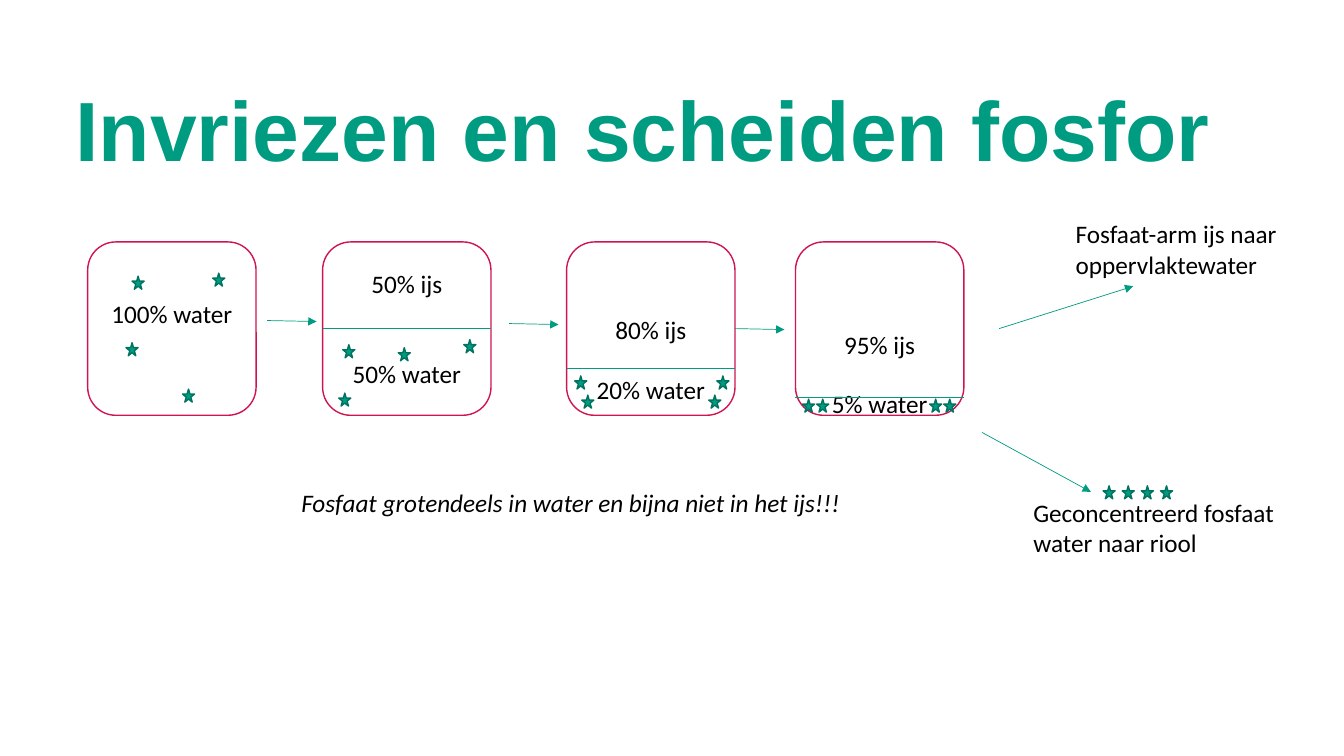
import pptx
import pptx.util
import pptx.dml.color
import pptx.enum.shapes
import pptx.enum.text
import pptx.oxml.ns
import lxml.etree

Inches = pptx.util.Inches
Pt = pptx.util.Pt
RGBColor = pptx.dml.color.RGBColor
SHAPE = pptx.enum.shapes.MSO_SHAPE
ALIGN = pptx.enum.text.PP_ALIGN
ANCHOR = pptx.enum.text.MSO_ANCHOR

GREEN = RGBColor(0x00, 0x9C, 0x82)
DARK = RGBColor(0x00, 0x73, 0x60)
RED = RGBColor(0xCE, 0x15, 0x4F)
WHITE = RGBColor(0xFF, 0xFF, 0xFF)
BLACK = RGBColor(0x00, 0x00, 0x00)


def write(frame, text, size=18, font="Calibri", color=BLACK, bold=False,
          italic=False, align=ALIGN.LEFT, gap=0, anchor=ANCHOR.TOP):
    """Fill a frame, one paragraph a line, with gap points between them."""
    frame.word_wrap = True
    frame.vertical_anchor = anchor
    for i, line in enumerate(text.split("\n")):
        par = frame.paragraphs[0] if i == 0 else frame.add_paragraph()
        par.alignment = align
        if i > 0:
            par.space_before = Pt(gap)
        run = par.add_run()
        run.text = line
        run.font.size = Pt(size)
        run.font.name = font
        run.font.bold = bold
        run.font.italic = italic
        run.font.color.rgb = color


def link(x1, y1, x2, y2, arrow=True):
    line = slide.shapes.add_connector(
        pptx.enum.shapes.MSO_CONNECTOR.STRAIGHT,
        Inches(x1), Inches(y1), Inches(x2), Inches(y2))
    line.line.color.rgb = GREEN
    line.line.width = Pt(0.5)
    if arrow:
        lxml.etree.SubElement(line.line._get_or_add_ln(),
                              pptx.oxml.ns.qn("a:tailEnd"), type="triangle")
    lxml.etree.SubElement(line._element.spPr, pptx.oxml.ns.qn("a:effectLst"))


deck = pptx.Presentation()
deck.slide_width = Inches(13.33)
deck.slide_height = Inches(7.5)
slide = deck.slides.add_slide(deck.slide_layouts[5])

title = slide.shapes.title
title.left, title.top = Inches(0.65), Inches(0.55)
title.width, title.height = Inches(12.04), Inches(1.57)
write(title.text_frame, "Invriezen en scheiden fosfor", size=60, font="Arial",
      color=GREEN, bold=True, anchor=ANCHOR.MIDDLE)
title.text_frame.paragraphs[0].line_spacing = 0.9

# Four tanks: left, text, top inset, gap in points, height of the ice line
TOP, WIDE, HIGH = 2.4, 1.67, 1.72
tanks = [
    (0.87, "100% water", 0.48, 0, None),
    (3.2, "50% ijs\n50% water", 0.18, 43, 3.26),
    (5.62, "80% ijs\n20% water", 0.64, 21, 3.65),
    (7.89, "95% ijs\n5% water", 0.79, 20, 3.94),
]
for left, text, inset, gap, level in tanks:
    tank = slide.shapes.add_shape(SHAPE.ROUNDED_RECTANGLE, Inches(left),
                                  Inches(TOP), Inches(WIDE), Inches(HIGH))
    tank.shadow.inherit = False
    tank.fill.solid()
    tank.fill.fore_color.rgb = WHITE
    tank.line.color.rgb = RED
    tank.line.width = Pt(1)
    tank.text_frame.margin_top = Inches(inset)
    tank.text_frame.margin_bottom = 0
    write(tank.text_frame, text, align=ALIGN.CENTER, gap=gap)
    if level:
        link(left, level, left + WIDE, level, arrow=False)

# Steps between the tanks, then the two outlets
for x, y in [(2.65, 3.18), (5.05, 3.21), (7.29, 3.26)]:
    link(x, y, x + 0.49, y + 0.01)
link(9.91, 3.26, 11.24, 2.84)
link(9.74, 4.29, 10.82, 4.88)

notes = [
    (10.57, 2.12, 2.52, 0.71, "Fosfaat-arm ijs naar oppervlaktewater", False),
    (10.15, 4.88, 3.12, 0.71, "Geconcentreerd fosfaat water naar riool", False),
    (2.89, 4.79, 6.67, 0.4,
     "Fosfaat grotendeels in water en bijna niet in het ijs!!!", True),
]
for x, y, wide, high, text, italic in notes:
    box = slide.shapes.add_textbox(Inches(x), Inches(y), Inches(wide), Inches(high))
    write(box.text_frame, text, italic=italic)

# Phosphate stars: four in each tank, beside the labels, and four at the sewer
stars = [
    (1.81, 3.86), (1.25, 3.4), (2.11, 2.71), (1.31, 2.74),
    (3.36, 3.9), (4.6, 3.37), (3.95, 3.45), (3.4, 3.42),
    (5.77, 3.92), (7.11, 3.73), (5.7, 3.73), (7.03, 3.92),
    (7.96, 3.96), (9.36, 3.96), (9.22, 3.96), (8.1, 3.96),
]
stars += [(10.94 + 0.19 * i, 4.82) for i in range(4)]
for x, y in stars:
    star = slide.shapes.add_shape(SHAPE.STAR_5_POINT, Inches(x), Inches(y),
                                  Inches(0.12), Inches(0.13))
    star.shadow.inherit = False
    star.fill.solid()
    star.fill.fore_color.rgb = GREEN
    star.line.color.rgb = DARK
    star.line.width = Pt(1)

deck.save("out.pptx")
